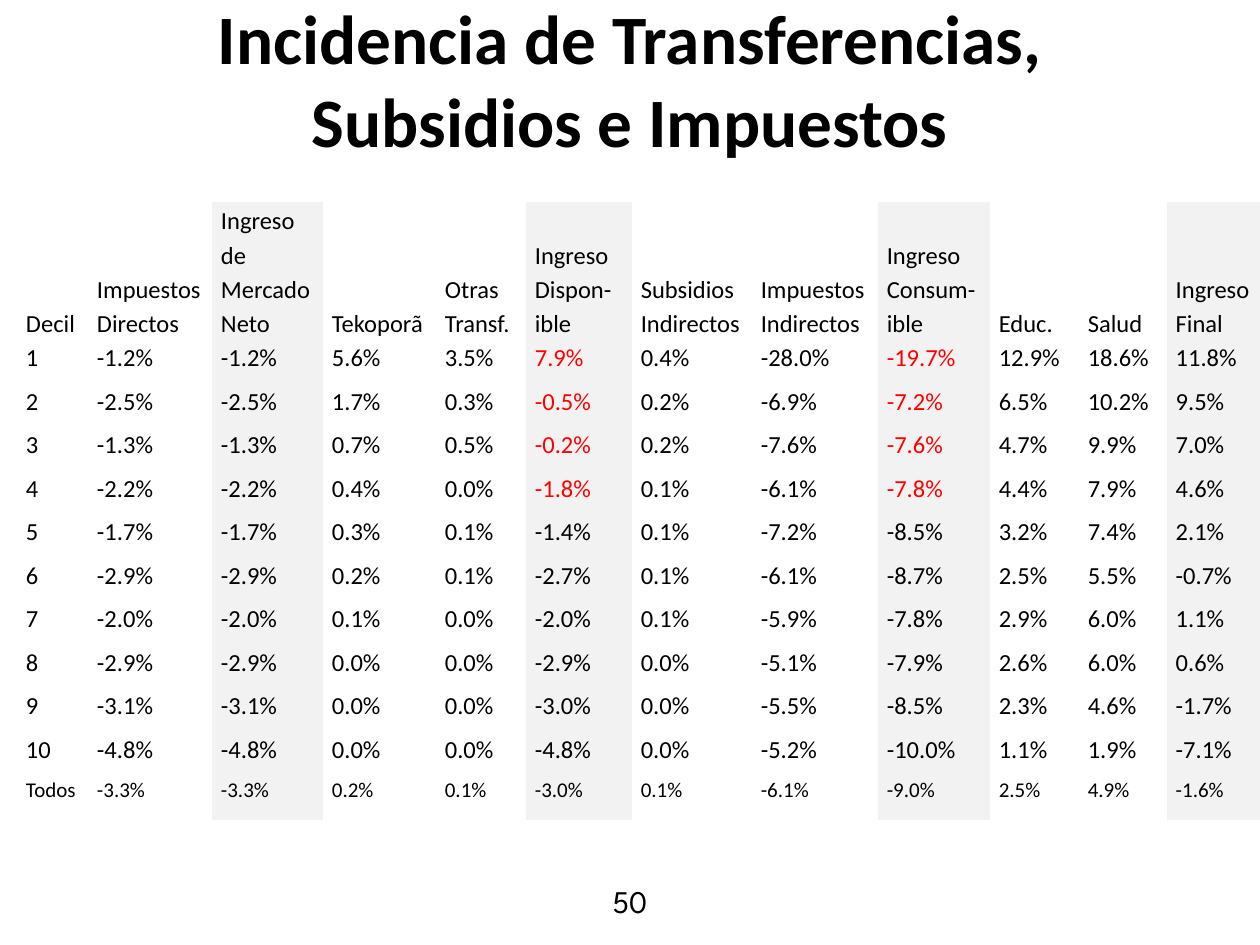
from pptx import Presentation
from pptx.dml.color import RGBColor
from pptx.enum.text import MSO_ANCHOR, MSO_AUTO_SIZE, PP_ALIGN
from pptx.oxml.ns import qn
from pptx.util import Emu, Pt

MID, BASE, TOP = MSO_ANCHOR.MIDDLE, MSO_ANCHOR.BOTTOM, MSO_ANCHOR.TOP
LEFT, CENTER, FULL = PP_ALIGN.LEFT, PP_ALIGN.CENTER, PP_ALIGN.JUSTIFY
FIXED = MSO_AUTO_SIZE.NONE

TITLE = "Incidencia de Transferencias, Subsidios e Impuestos"
PAGE = "50"
HEADS = ["Decil", "Impuestos Directos", "Ingreso de Mercado Neto", "Tekoporã",
         "Otras Transf.", "Ingreso Dispon-ible", "Subsidios Indirectos",
         "Impuestos Indirectos", "Ingreso Consum-ible", "Educ.", "Salud",
         "Ingreso Final"]
DATA = [
    ("1", -1.2, -1.2, 5.6, 3.5, 7.9, 0.4, -28.0, -19.7, 12.9, 18.6, 11.8),
    ("2", -2.5, -2.5, 1.7, 0.3, -0.5, 0.2, -6.9, -7.2, 6.5, 10.2, 9.5),
    ("3", -1.3, -1.3, 0.7, 0.5, -0.2, 0.2, -7.6, -7.6, 4.7, 9.9, 7.0),
    ("4", -2.2, -2.2, 0.4, 0.0, -1.8, 0.1, -6.1, -7.8, 4.4, 7.9, 4.6),
    ("5", -1.7, -1.7, 0.3, 0.1, -1.4, 0.1, -7.2, -8.5, 3.2, 7.4, 2.1),
    ("6", -2.9, -2.9, 0.2, 0.1, -2.7, 0.1, -6.1, -8.7, 2.5, 5.5, -0.7),
    ("7", -2.0, -2.0, 0.1, 0.0, -2.0, 0.1, -5.9, -7.8, 2.9, 6.0, 1.1),
    ("8", -2.9, -2.9, 0.0, 0.0, -2.9, 0.0, -5.1, -7.9, 2.6, 6.0, 0.6),
    ("9", -3.1, -3.1, 0.0, 0.0, -3.0, 0.0, -5.5, -8.5, 2.3, 4.6, -1.7),
    ("10", -4.8, -4.8, 0.0, 0.0, -4.8, 0.0, -5.2, -10.0, 1.1, 1.9, -7.1),
    ("Todos", -3.3, -3.3, 0.2, 0.1, -3.0, 0.1, -6.1, -9.0, 2.5, 4.9, -1.6),
]
WIDTHS = [71, 124, 111, 113, 90, 106, 120, 126, 112, 89, 88, 93]
HEIGHTS = [115] + [44, 43] * 5 + [46]
SHADED = {2, 5, 8, 11}
RED_COLS, RED_ROWS = {5, 8}, range(1, 5)
LEFT_COLS = {7, 8, 11}
NO_GRID = "{2D5ABB26-0587-4C30-8999-92F81FD0307C}"


def px(n):
    return Emu(round(n * 914400 / 126))


def color(code):
    return RGBColor.from_string(code)


def write(frame, text, size, align, font="Calibri", code="000000", bold=False):
    para = frame.paragraphs[0]
    para.alignment = align
    run = para.add_run()
    run.text = text
    run.font.name = font
    run.font.size = Pt(size)
    run.font.bold = bold
    run.font.color.rgb = color(code)
    return para


def place(shape, *box):
    shape.left, shape.top, shape.width, shape.height = map(px, box)


def fill_cell(cell, row, col, text):
    cell.margin_left = cell.margin_right = px(9)
    cell.margin_top = cell.margin_bottom = 0
    cell.vertical_anchor = TOP if row else BASE
    if col in SHADED:
        cell.fill.solid()
        cell.fill.fore_color.rgb = color("F2F2F2")
    else:
        cell.fill.background()
    red = col in RED_COLS and row in RED_ROWS
    para = write(cell.text_frame, text, 12 if row == len(DATA) else 14,
                 LEFT if row and col in LEFT_COLS else FULL,
                 code="FF0000" if red else "000000")
    para.line_spacing = 1.15


def add_grid(slide):
    rows = [HEADS] + [[r[0]] + [f"{v:.1f}%" for v in r[1:]] for r in DATA]
    table = slide.shapes.add_table(
        len(rows), len(HEADS), px(17), px(202),
        px(sum(WIDTHS)), px(sum(HEIGHTS))).table
    table.first_row = table.horz_banding = False
    table._tbl.tblPr.find(qn("a:tableStyleId")).text = NO_GRID
    for col, width in zip(table.columns, WIDTHS):
        col.width = px(width)
    for line, height in zip(table.rows, HEIGHTS):
        line.height = px(height)
    for r, texts in enumerate(rows):
        for c, text in enumerate(texts):
            fill_cell(table.cell(r, c), r, c, text)


def main():
    deck = Presentation()
    deck.slide_width, deck.slide_height = px(1260), px(945)
    slide = deck.slides.add_slide(deck.slide_layouts[5])

    title = slide.shapes.title
    place(title, 63, 0, 1134, 157)
    title.text_frame.auto_size = FIXED
    title.text_frame.vertical_anchor = MID
    write(title.text_frame, TITLE, 39.6, CENTER, bold=True)

    add_grid(slide)

    page = slide.shapes.add_textbox(px(531), px(876), px(198), px(50))
    page.text_frame.word_wrap = True
    write(page.text_frame, PAGE, 18, CENTER, font="League Spartan")

    deck.save("out.pptx")


if __name__ == "__main__":
    main()
